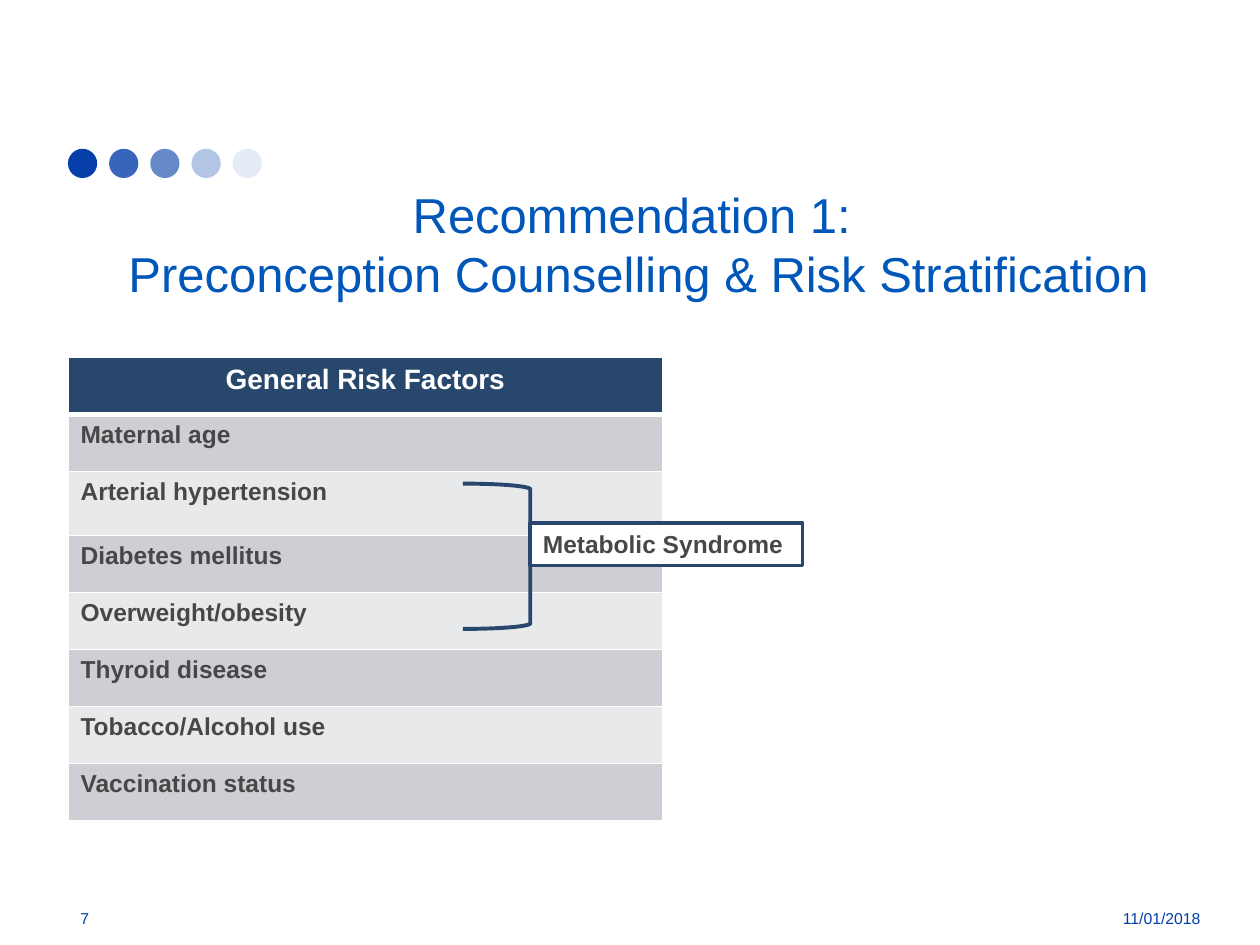
from lxml import etree
from pptx import Presentation
from pptx import util as u
from pptx.dml.color import RGBColor
from pptx.enum import shapes, text
from pptx.oxml.ns import qn

COLORS = {
    "dot": "063FA9", "footer": "003FA8", "title": "0056B9", "navy": "28476D",
    "text": "474747", "white": "FFFFFF", "dark_band": "CDCFD4", "light_band": "E8E9EB",
}
DOT_OPACITIES = [100, 80, 61, 30, 10]
TITLE = "Recommendation 1: \vPreconception Counselling & Risk Stratification"
RISK_FACTORS = [
    "General Risk Factors", "Maternal age", "Arterial hypertension", "Diabetes mellitus",
    "Overweight/obesity", "Thyroid disease", "Tobacco/Alcohol use", "Vaccination status",
]
CALLOUT = "Metabolic Syndrome "
LEFT, CENTER, RIGHT = text.PP_ALIGN.LEFT, text.PP_ALIGN.CENTER, text.PP_ALIGN.RIGHT
TOP, MIDDLE = text.MSO_ANCHOR.TOP, text.MSO_ANCHOR.MIDDLE
# words, (left, top, width, height) in cm, size, colour, alignment, anchor
TEXTS = [
    (TITLE, (1.3, 3.6, 23.14, 2.64), 28, "title", CENTER, TOP),
    ("7", (1.37, 18, 2.44, 1.02), 9, "footer", LEFT, MIDDLE),
    ("11/01/2018", (21.05, 18, 3.4, 1.02), 9, "footer", RIGHT, MIDDLE),
]
MARGIN = 1.37
DOT_TOP, DOT_SIZE, DOT_STEP = 3, 0.59, 0.83
TABLE_TOP, TABLE_WIDTH, ROW_HEIGHT, TALL_ROW, TALL_HEIGHT = 7.21, 11.99, 1.15, 2, 1.29


def rgb(name):
    return RGBColor.from_string(COLORS[name])


def place(*lengths):
    return [u.Cm(length) for length in lengths]


def write(frame, words, size, color, align, bold=False):
    frame.text = words
    para = frame.paragraphs[0]
    para.alignment = align
    for span in para.runs:
        for name, value in {"name": "Arial", "size": u.Pt(size), "bold": bold}.items():
            setattr(span.font, name, value)
        span.font.color.rgb = rgb(color)


def add_shape(page, kind, at, fill=None, line=None, width=0):
    shape = page.shapes.add_shape(kind, *place(*at))
    shape.shadow.inherit = False
    if fill:
        shape.fill.solid()
        shape.fill.fore_color.rgb = rgb(fill)
    else:
        shape.fill.background()
    if line:
        shape.line.color.rgb = rgb(line)
        shape.line.width = u.Pt(width)
    else:
        shape.line.fill.background()
    return shape


def set_borders(cell, widths):
    props = cell._tc.get_or_add_tcPr()
    for index, (side, width) in enumerate(widths.items()):
        line = etree.Element(qn(f"a:ln{side}"), w=str(u.Pt(width)))
        fill = etree.SubElement(line, qn("a:solidFill"))
        etree.SubElement(fill, qn("a:srgbClr"), val=COLORS["white"])
        props.insert(index, line)


def add_dots(page):
    for index, opacity in enumerate(DOT_OPACITIES):
        at = (MARGIN + index * DOT_STEP, DOT_TOP, DOT_SIZE, DOT_SIZE)
        dot = add_shape(page, shapes.MSO_SHAPE.OVAL, at, "dot")
        if opacity < 100:
            color = dot._element.spPr.find(f"{qn('a:solidFill')}/{qn('a:srgbClr')}")
            etree.SubElement(color, qn("a:alpha"), val=str(opacity * 1000))


def add_texts(page):
    for words, at, size, color, align, anchor in TEXTS:
        frame = page.shapes.add_textbox(*place(*at)).text_frame
        frame.word_wrap = True
        frame.vertical_anchor = anchor
        write(frame, words, size, color, align)


def add_risk_table(page):
    count = len(RISK_FACTORS)
    heights = [TALL_HEIGHT if row == TALL_ROW else ROW_HEIGHT for row in range(count)]
    at = place(MARGIN, TABLE_TOP, TABLE_WIDTH, sum(heights))
    table = page.shapes.add_table(count, 1, *at).table
    for row, (words, height) in enumerate(zip(RISK_FACTORS, heights)):
        table.rows[row].height = u.Cm(height)
        cell = table.cell(row, 0)
        if row == 0:
            band, style = "navy", (16, "white", CENTER)
        else:
            band, style = ("dark_band" if row % 2 else "light_band"), (14, "text", LEFT)
        cell.fill.solid()
        cell.fill.fore_color.rgb = rgb(band)
        write(cell.text_frame, words, *style, bold=True)
        # The rule under the heading is thicker than the others
        set_borders(cell, {"L": 1, "R": 1, "T": 3 if row == 1 else 1, "B": 3 if row == 0 else 1})


def add_callout(page):
    add_shape(page, shapes.MSO_SHAPE.RIGHT_BRACKET, (9.33, 9.75, 1.36, 2.93),
              line="navy", width=2.25)
    box = add_shape(page, shapes.MSO_SHAPE.RECTANGLE, (10.69, 10.54, 5.49, 0.86),
                    "white", "navy", 2)
    frame = box.text_frame
    frame.word_wrap = False
    frame.vertical_anchor = TOP
    frame.auto_size = text.MSO_AUTO_SIZE.SHAPE_TO_FIT_TEXT
    write(frame, CALLOUT, 14, "text", CENTER, bold=True)


def main():
    deck = Presentation()
    deck.slide_width, deck.slide_height = place(25.4, 19.05)
    page = deck.slides.add_slide(deck.slide_layouts[6])
    add_dots(page)
    add_texts(page)
    add_risk_table(page)
    add_callout(page)
    deck.save("out.pptx")


if __name__ == "__main__":
    main()
